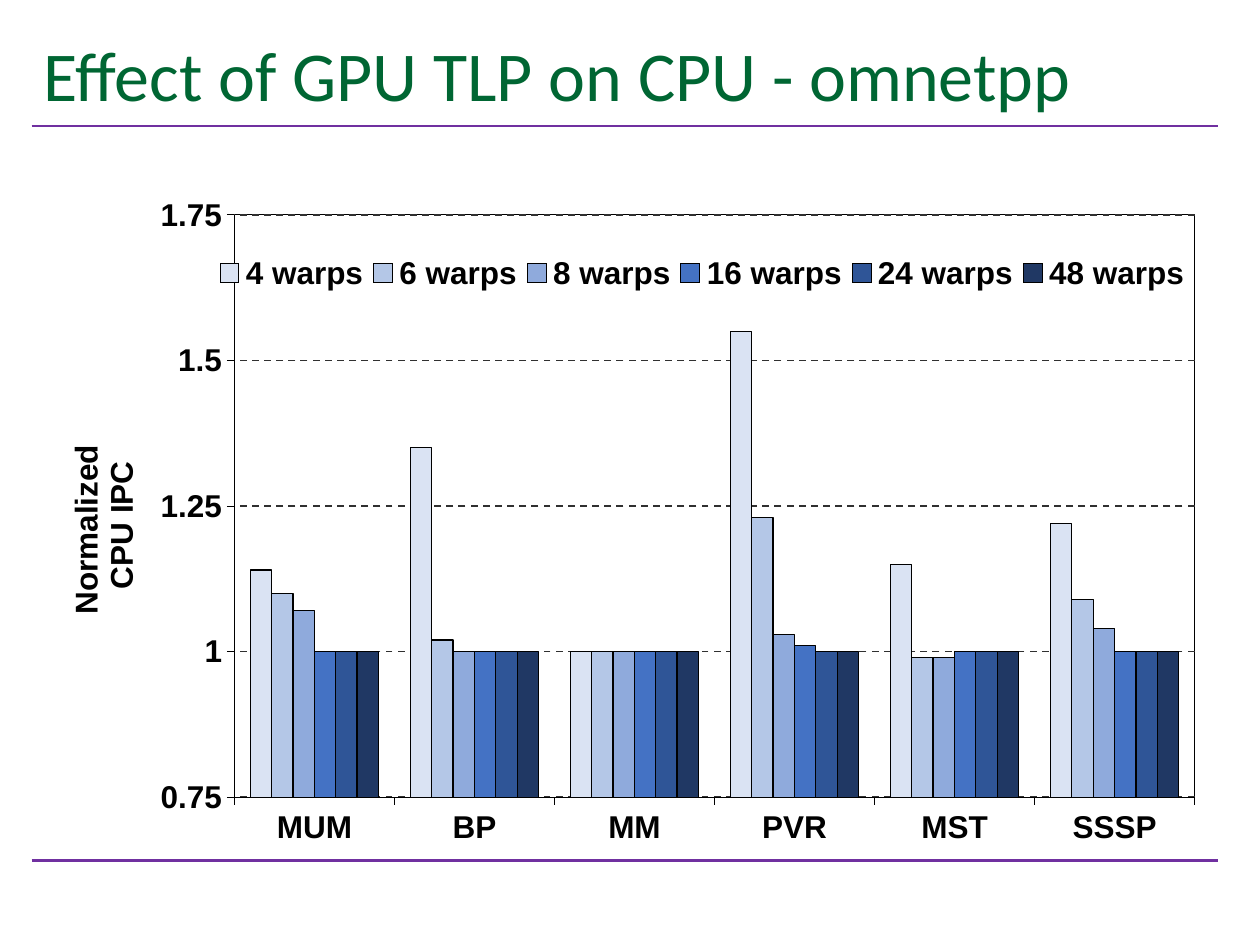
from pptx import Presentation
from pptx.chart.data import CategoryChartData
from pptx.dml.color import RGBColor
from pptx.enum.chart import XL_CHART_TYPE, XL_LEGEND_POSITION, XL_TICK_MARK
from pptx.enum.dml import MSO_LINE
from pptx.enum.shapes import MSO_CONNECTOR
from pptx.enum.text import MSO_ANCHOR
from pptx.oxml import parse_xml
from pptx.oxml.ns import nsdecls
from pptx.util import Inches, Pt

CLUSTERED = XL_CHART_TYPE.COLUMN_CLUSTERED
TOP = XL_LEGEND_POSITION.TOP
OUTSIDE = XL_TICK_MARK.OUTSIDE
DASH = MSO_LINE.DASH
STRAIGHT = MSO_CONNECTOR.STRAIGHT
MIDDLE = MSO_ANCHOR.MIDDLE

LEFT, WIDTH = 0.25, 9.42
HEADER_Y, FOOTER_Y = 1, 6.83
BENCHMARKS = ["MUM", "BP", "MM", "PVR", "MST", "SSSP"]
WARPS = [
    ("4 warps", "DAE3F3", [1.14, 1.35, 1, 1.55, 1.15, 1.22]),
    ("6 warps", "B4C7E7", [1.1, 1.02, 1, 1.23, 0.99, 1.09]),
    ("8 warps", "8FAADC", [1.07, 1, 1, 1.03, 0.99, 1.04]),
    ("16 warps", "4472C4", [1, 1, 1, 1.01, 1, 1]),
    ("24 warps", "2F5597", [1] * 6),
    ("48 warps", "203864", [1] * 6),
]
IPC_SCALE = {
    "minimum_scale": 0.75,
    "maximum_scale": 1.75,
    "major_unit": 0.25,
    "has_major_gridlines": True,
}
LABEL_FORMAT = {"name": "Arial", "size": Pt(18), "bold": True}
TITLE_FORMAT = {"name": "Calibri", "size": Pt(40)}


def rgb(value):
    return RGBColor.from_string(value)


def apply_format(target, values):
    for attribute, value in values.items():
        setattr(target, attribute, value)


def format_font(font, values, color):
    apply_format(font, values)
    font.color.rgb = rgb(color)


def format_line(line, color, points):
    line.color.rgb = rgb(color)
    line.width = Pt(points)


def add_rule(slide, y):
    rule = slide.shapes.add_connector(
        STRAIGHT, Inches(LEFT), Inches(y), Inches(LEFT + WIDTH), Inches(y))
    format_line(rule.line, "7030A0", 1.5)
    effects = parse_xml(f"<a:effectLst {nsdecls('a')}/>")
    rule.element.spPr.append(effects)


def add_title(slide, wording):
    heading = slide.shapes.add_textbox(
        Inches(LEFT), Inches(0.17), Inches(WIDTH), Inches(0.83))
    frame = heading.text_frame
    apply_format(frame, {"word_wrap": True, "vertical_anchor": MIDDLE})
    run = frame.paragraphs[0].add_run()
    run.text = wording
    format_font(run.font, TITLE_FORMAT, "006633")


def place(part, index, inner=False, **fractions):
    for old_layout in part.xpath("c:layout"):
        part.remove(old_layout)
    target = '<c:layoutTarget val="inner"/>' if inner else ""
    modes = "".join(f'<c:{side}Mode val="edge"/>' for side in "xy")
    values = "".join(f'<c:{key} val="{value}"/>' for key, value in fractions.items())
    part.insert(index, parse_xml(
        f"<c:layout {nsdecls('c')}><c:manualLayout>{target}{modes}{values}"
        "</c:manualLayout></c:layout>"))


def format_axis(axis):
    axis.major_tick_mark = OUTSIDE
    format_font(axis.tick_labels.font, LABEL_FORMAT, "000000")
    format_line(axis.format.line, "000000", 0.5)


def format_ipc_axis(axis):
    format_axis(axis)
    apply_format(axis, IPC_SCALE)
    apply_format(axis.tick_labels,
                 {"number_format": "General", "number_format_is_linked": False})
    gridline = axis.major_gridlines.format.line
    format_line(gridline, "303030", 1)
    gridline.dash_style = DASH
    caption = axis.axis_title.text_frame
    caption.text = "Normalized \nCPU IPC"
    for paragraph in caption.paragraphs:
        for run in paragraph.runs:
            format_font(run.font, LABEL_FORMAT, "000000")


def frame_plot(plot_area):
    plot_area.append(parse_xml(
        f"<c:spPr {nsdecls('c', 'a')}><a:noFill/><a:ln w=\"6350\"><a:solidFill>"
        '<a:srgbClr val="000000"/></a:solidFill></a:ln></c:spPr>'))


def add_ipc_chart(slide):
    data = CategoryChartData()
    data.categories = BENCHMARKS
    for name, _, speeds in WARPS:
        data.add_series(name, speeds)
    chart = slide.shapes.add_chart(
        CLUSTERED, Inches(LEFT), Inches(HEADER_Y), Inches(WIDTH),
        Inches(FOOTER_Y - HEADER_Y), data).chart
    apply_format(chart, {"has_title": False, "has_legend": True})
    format_font(chart.font, LABEL_FORMAT, "000000")
    apply_format(chart.legend, {"position": TOP, "include_in_layout": True})
    format_font(chart.legend.font, LABEL_FORMAT, "000000")
    format_axis(chart.category_axis)
    format_ipc_axis(chart.value_axis)

    bars = chart.plots[0]
    apply_format(bars, {"gap_width": 150, "overlap": 0, "vary_by_categories": False})
    for series, (_, color, _) in zip(bars.series, WARPS):
        series.format.fill.solid()
        series.format.fill.fore_color.rgb = rgb(color)
        format_line(series.format.line, "000000", 0.75)

    plot_area = chart.element.xpath(".//c:plotArea")[0]
    legend = chart.element.xpath(".//c:legend")[0]
    caption = chart.element.xpath(".//c:valAx/c:title")[0]
    place(plot_area, 0, inner=True, x=0.171, y=0.121, w=0.809, h=0.793)
    place(legend, 1, x=0.15, y=0.17, w=0.83, h=0.06)
    place(caption, 1, x=0.026, y=0.417)
    frame_plot(plot_area)


def main():
    deck = Presentation()
    deck.slide_width, deck.slide_height = Inches(10), Inches(7.5)
    slide = deck.slides.add_slide(deck.slide_layouts[6])
    for y in (FOOTER_Y, HEADER_Y):
        add_rule(slide, y)
    add_title(slide, "Effect of GPU TLP on CPU - omnetpp")
    add_ipc_chart(slide)
    deck.save("out.pptx")


if __name__ == "__main__":
    main()
